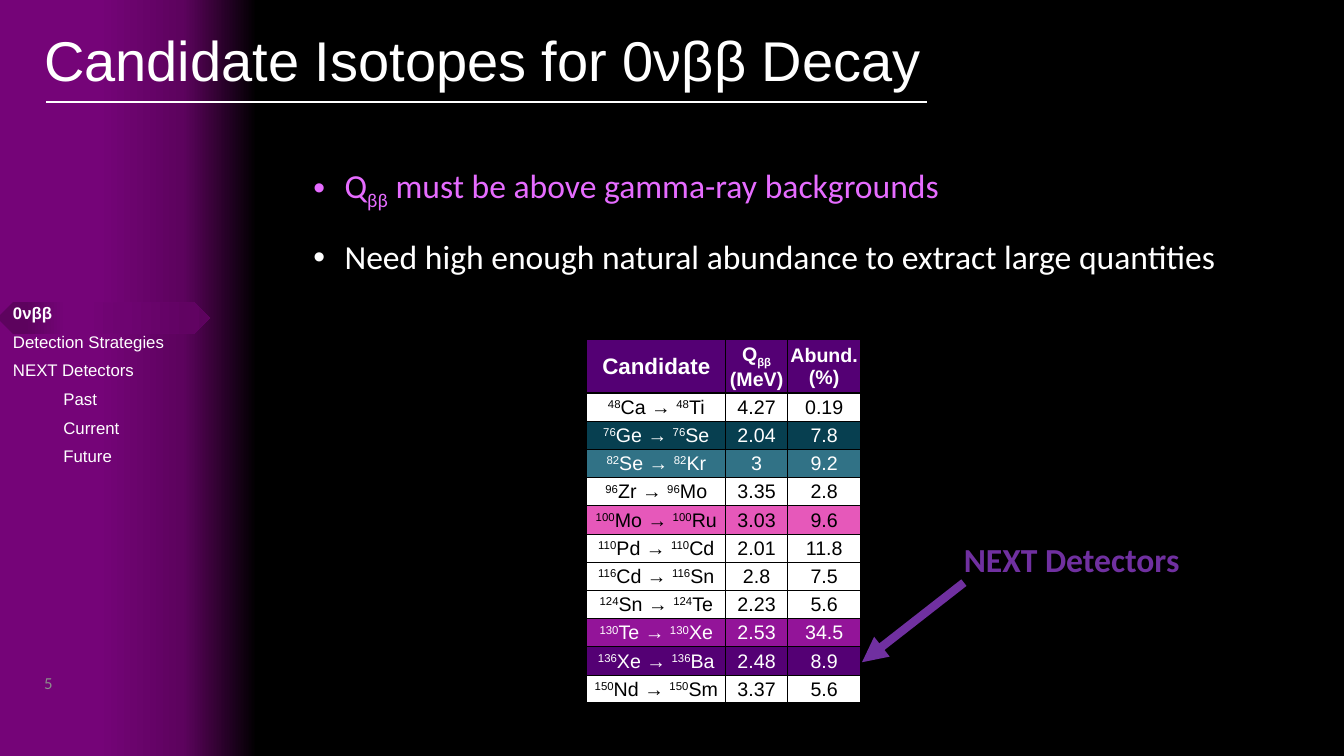
from lxml.etree import SubElement
from pptx import Presentation
from pptx.dml.color import RGBColor
from pptx.enum.shapes import MSO_CONNECTOR as Connector, MSO_SHAPE as Preset
from pptx.enum.text import MSO_ANCHOR as Anchor, PP_ALIGN as Align
from pptx.oxml.ns import qn
from pptx.util import Inches, Pt

WIDTH, HEIGHT = Inches(13.33), Inches(7.5)
WHITE, BLACK, GREY = "FFFFFF", "000000", "8C8C8C"
PURPLE, PLUM, BRIGHT, DEEP = "540074", "5D035E", "750478", "7030A0"
SUB, SUPER = -25, 30

# Isotope rows: mass, parent, daughter, Q value, abundance, fill, text colour
ISOTOPES = [
    (48, "Ca", "Ti", "4.27", "0.19", WHITE, BLACK),
    (76, "Ge", "Se", "2.04", "7.8", "073F50", WHITE),
    (82, "Se", "Kr", "3", "9.2", "317286", WHITE),
    (96, "Zr", "Mo", "3.35", "2.8", WHITE, BLACK),
    (100, "Mo", "Ru", "3.03", "9.6", "E658BA", BLACK),
    (110, "Pd", "Cd", "2.01", "11.8", WHITE, BLACK),
    (116, "Cd", "Sn", "2.8", "7.5", WHITE, BLACK),
    (124, "Sn", "Te", "2.23", "5.6", WHITE, BLACK),
    (130, "Te", "Xe", "2.53", "34.5", "931499", WHITE),
    (136, "Xe", "Ba", "2.48", "8.9", PURPLE, WHITE),
    (150, "Nd", "Sm", "3.37", "5.6", WHITE, BLACK),
]
CHAPTERS = [("0νββ", 0), ("Detection Strategies", 0), ("NEXT Detectors", 0),
            ("Past", 1), ("Current", 1), ("Future", 1)]


def across(percent):
    return int(WIDTH * percent / 100)


def down(percent):
    return int(HEIGHT * percent / 100)


def place(left, top, width, height):
    """Turn percentages of the slide into lengths."""
    return across(left), down(top), across(width), down(height)


def color(value):
    return RGBColor.from_string(value)


def add_span(para, text, size, ink, font="Arial", bold=False, shift=0):
    span = para.add_run()
    span.text = text
    span.font.size, span.font.name, span.font.bold = Pt(size), font, bold
    span.font.color.rgb = color(ink)
    if shift:
        span.font._element.set("baseline", str(shift * 1000))


def add_text(page, area, anchor=Anchor.TOP):
    frame = page.shapes.add_textbox(*place(*area)).text_frame
    frame.word_wrap = True
    frame.vertical_anchor = anchor
    return frame


def next_para(frame, index):
    return frame.add_paragraph() if index else frame.paragraphs[0]


def set_indent(para, margin, first=0):
    props = para._p.get_or_add_pPr()
    props.set("marL", str(Inches(margin)))
    props.set("indent", str(Inches(first)))
    return props


def add_gradient(page, preset, area, stops, flip=False):
    shape = page.shapes.add_shape(preset, *place(*area))
    shape.shadow.inherit = False
    shape.line.fill.background()
    shape.fill.gradient()
    shape.fill.gradient_angle = 0
    stop_list = shape._element.spPr.find(qn("a:gradFill")).find(qn("a:gsLst"))
    for stop in list(stop_list):
        stop_list.remove(stop)
    for position, value in stops:
        stop = SubElement(stop_list, qn("a:gs"), pos=str(position * 1000))
        SubElement(stop, qn("a:srgbClr"), val=value)
    if flip:
        shape._element.spPr.find(qn("a:xfrm")).set("flipH", "1")


def add_line(page, start, end, ink, weight, arrow=False):
    line = page.shapes.add_connector(
        Connector.STRAIGHT, across(start[0]), down(start[1]), across(end[0]), down(end[1]))
    line.line.color.rgb = color(ink)
    line.line.width = Pt(weight)
    if arrow:
        SubElement(line.line._get_or_add_ln(), qn("a:tailEnd"), type="triangle")
    SubElement(line._element.spPr, qn("a:effectLst"))


def add_borders(cell, top, bottom):
    props = cell._tc.get_or_add_tcPr()
    for side, weight in (("L", 1), ("R", 1), ("T", top), ("B", bottom)):
        border = SubElement(props, qn("a:ln" + side), w=str(Pt(weight)))
        fill = SubElement(border, qn("a:solidFill"))
        SubElement(fill, qn("a:srgbClr"), val=BLACK)


def fill_cell(cell, spans, fill, ink, size=14, bold=False, top=0.5, bottom=0.5):
    add_borders(cell, top, bottom)
    cell.fill.solid()
    cell.fill.fore_color.rgb = color(fill)
    cell.vertical_anchor = Anchor.MIDDLE
    cell.margin_left = cell.margin_right = cell.margin_top = Inches(0.01)
    cell.margin_bottom = 0
    para = cell.text_frame.paragraphs[0]
    para.alignment = Align.CENTER
    for text, shift in spans:
        add_span(para, text, size, ink, bold=bold, shift=shift)


def add_isotope_table(page):
    columns, header_row, body_row = (10.35, 4.58, 5.48), 7.07, 3.73
    area = 43.66, 44.93, sum(columns), header_row + body_row * len(ISOTOPES)
    table = page.shapes.add_table(len(ISOTOPES) + 1, 3, *place(*area)).table
    table.first_row = table.horz_banding = False
    for column, width in zip(table.columns, columns):
        column.width = across(width)
    for index, row in enumerate(table.rows):
        row.height = down(body_row if index else header_row)

    headings = [([("Candidate", 0)], 16),
                ([("Q", 0), ("ββ", SUB), (" (MeV)", 0)], 14),
                ([("Abund. (%)", 0)], 14)]
    for index, (spans, size) in enumerate(headings):
        fill_cell(table.cell(0, index), spans, PURPLE, WHITE, size, True, 1, 1)

    for row, (mass, parent, daughter, energy, abundance, fill, ink) in enumerate(ISOTOPES, 1):
        decay = [(str(mass), SUPER), (parent + " → ", 0), (str(mass), SUPER), (daughter, 0)]
        top = 1 if row == 1 else 0.5
        bottom = 1 if row == len(ISOTOPES) else 0.5
        for index, spans in enumerate((decay, [(energy, 0)], [(abundance, 0)])):
            fill_cell(table.cell(row, index), spans, fill, ink, top=top, bottom=bottom)


def add_bullets(page):
    frame = add_text(page, (22.58, 21.2, 72.09, 22.93))
    points = [
        ([("Q", 0), ("ββ", SUB), (" must be above gamma-ray backgrounds", 0)], "E66CFF"),
        ([("Need high enough natural abundance to extract large quantities", 0)], WHITE),
    ]
    for index, (spans, ink) in enumerate(points):
        para = next_para(frame, index)
        para.alignment = Align.JUSTIFY
        para.space_after = Pt(18)
        props = set_indent(para, 0.31, -0.31)
        SubElement(props, qn("a:buFont"), typeface="Arial")
        SubElement(props, qn("a:buChar"), char="•")
        for text, shift in spans:
            add_span(para, text, 24, ink, "Calibri", shift=shift)


def add_navigation(page):
    # Highlight behind the current chapter
    add_gradient(page, Preset.PENTAGON, (-0.15, 40, 6.98, 4.13),
                 [(0, BRIGHT), (27, BRIGHT), (71, PLUM), (100, PLUM)], flip=True)
    add_gradient(page, Preset.PENTAGON, (6.3, 40, 9.3, 4.13),
                 [(0, BRIGHT), (30, "6E0471"), (83, "610362"), (100, PLUM)])
    # Chapter names
    frame = add_text(page, (0.23, 30, 16.28, 41.73), Anchor.MIDDLE)
    for index, (chapter, level) in enumerate(CHAPTERS):
        para = next_para(frame, index)
        para.level = level
        para.space_before = Pt(6)
        set_indent(para, 0.5 * level)
        add_span(para, chapter, 12, WHITE, bold=index == 0)


def main():
    deck = Presentation()
    deck.slide_width, deck.slide_height = WIDTH, HEIGHT
    page = deck.slides.add_slide(deck.slide_layouts[6])
    page.background.fill.solid()
    page.background.fill.fore_color.rgb = color(BLACK)

    # Sidebar, title and rule
    add_gradient(page, Preset.RECTANGLE, (0, 0, 19.13, 100),
                 [(0, BRIGHT), (38, BRIGHT), (71, PLUM), (100, BLACK)])
    title = add_text(page, (2.55, -1.33, 86.27, 19.33), Anchor.MIDDLE).paragraphs[0]
    title.line_spacing = 0.9
    add_span(title, "Candidate Isotopes for 0νββ Decay", 40, WHITE)
    add_line(page, (3.45, 13.47), (68.94, 13.47), WHITE, 1)

    # Content
    add_isotope_table(page)
    number = add_text(page, (2.55, 87.6, 22.5, 5.33), Anchor.MIDDLE).paragraphs[0]
    add_span(number, "5", 12, GREY, "Calibri")
    add_bullets(page)
    add_navigation(page)

    # Callout to the xenon row
    add_line(page, (71.72, 77.07), (64.14, 87.6), DEEP, 6, arrow=True)
    label = add_text(page, (70.97, 70.67, 25, 6.67)).paragraphs[0]
    add_span(label, "NEXT Detectors", 24, DEEP, "Calibri", bold=True)

    deck.save("out.pptx")


if __name__ == "__main__":
    main()
